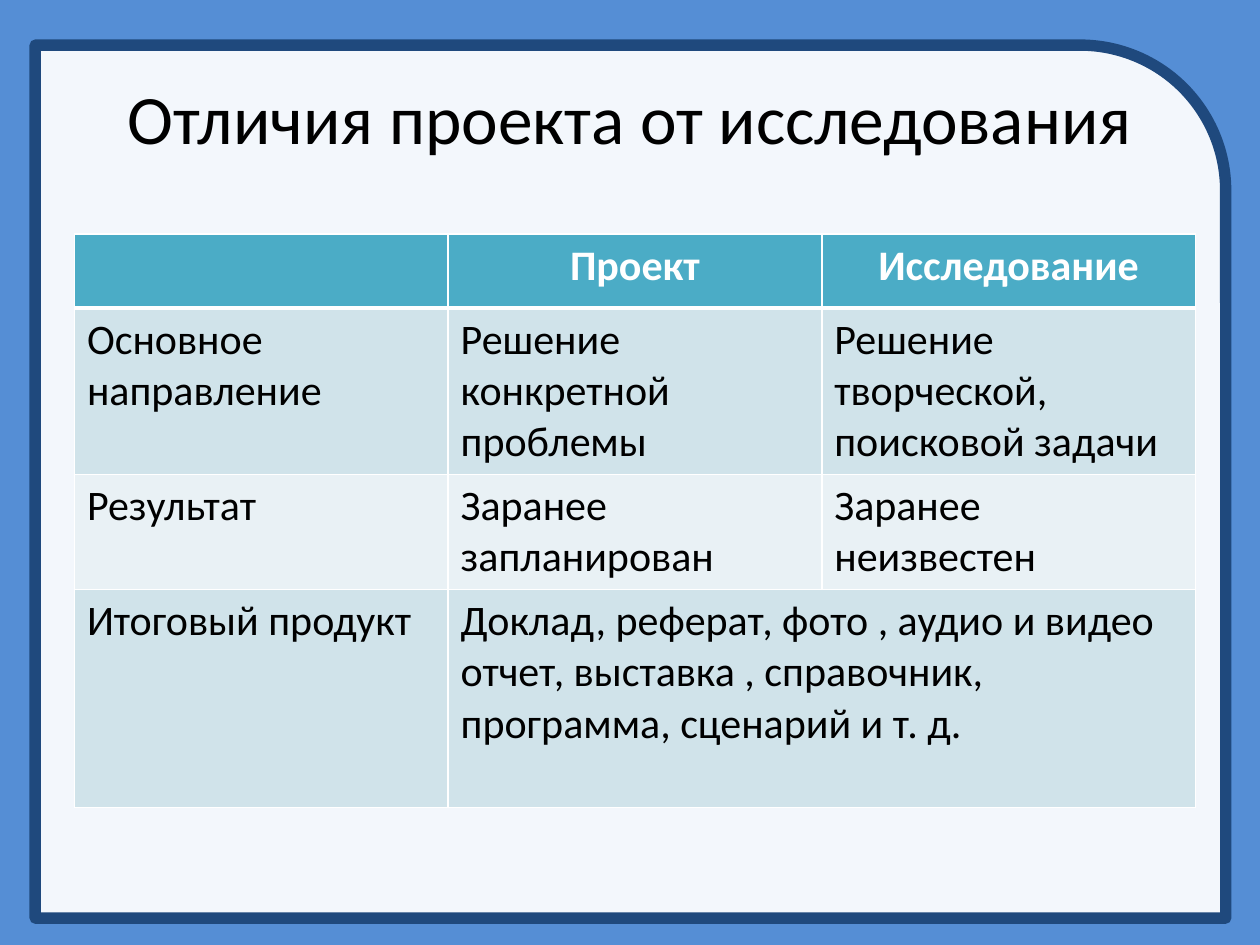
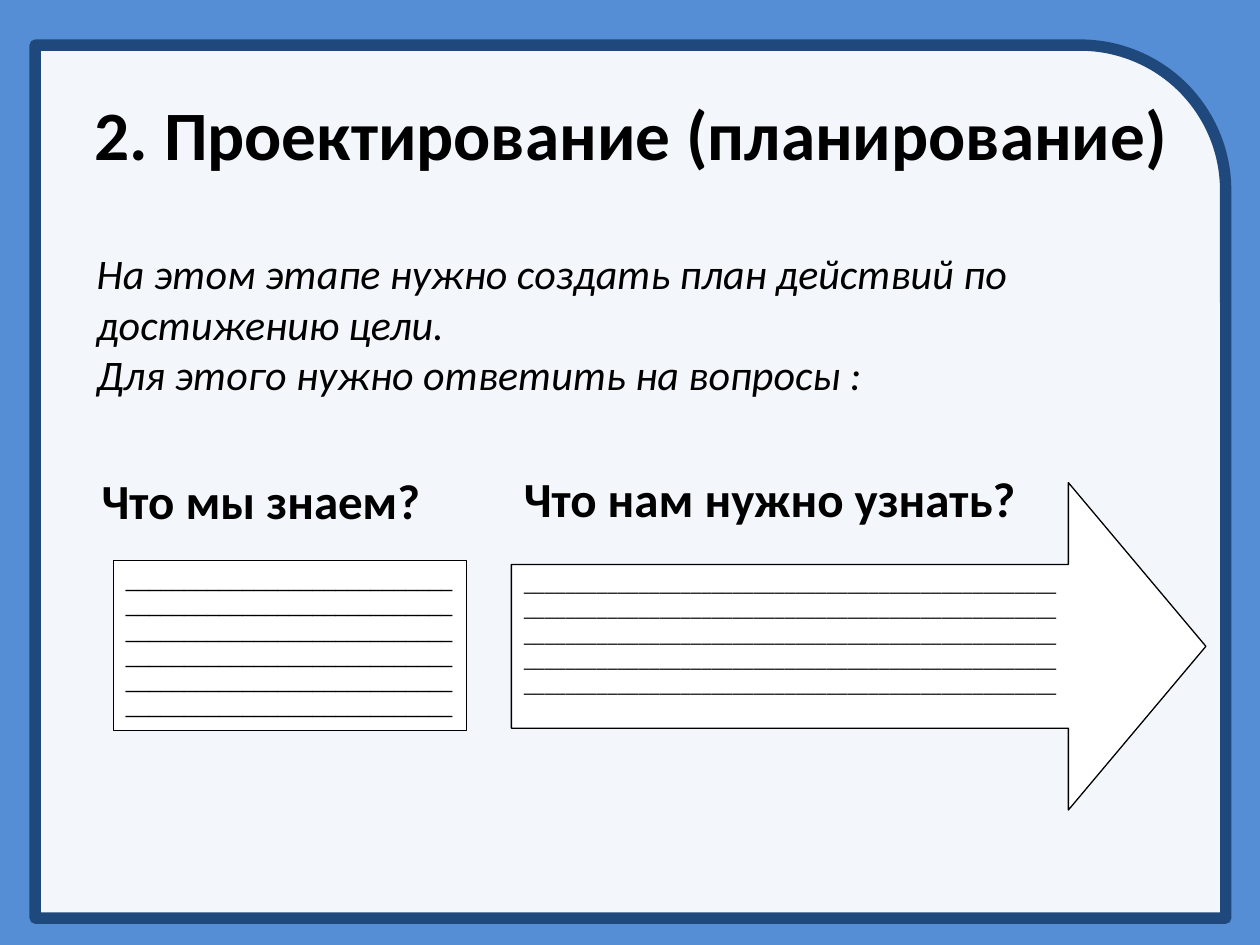
from lxml.etree import SubElement
from pptx import Presentation
from pptx.dml.color import RGBColor
from pptx.enum.shapes import MSO_SHAPE
from pptx.enum.text import MSO_ANCHOR, PP_ALIGN
from pptx.oxml.ns import qn
from pptx.util import Cm, Pt

COLORS = {
    "background": "558ED5",
    "frame": "1F497D",
    "white": "FFFFFF",
    "black": "000000",
    "header": "4BACC6",
    "band_dark": "D0E3EA",
    "band_light": "E9F1F5",
}
FONT = "Calibri"
TITLE_SIZE = 39.6


def color(name):
    return RGBColor.from_string(COLORS[name])


def set_font(p, size, name=FONT, ink="black", bold=False, italic=False):
    f = p.font
    f.name, f.size, f.bold, f.italic = name, Pt(size), bold, italic
    f.color.rgb = color(ink)


def write(tf, lines, size, align=PP_ALIGN.LEFT, **style):
    tf.word_wrap = True
    tf.text = "\n".join(lines)
    for p in tf.paragraphs:
        p.alignment = align
        set_font(p, size, **style)


def add_text(s, box, lines, size, **style):
    tb = s.shapes.add_textbox(*map(Cm, box))
    write(tb.text_frame, lines, size, **style)


def add_shape(s, kind, box, line, width):
    sp = s.shapes.add_shape(kind, *map(Cm, box))
    sp.shadow.inherit = False
    sp.fill.solid()
    sp.fill.fore_color.rgb = color("white")
    sp.line.color.rgb = color(line)
    sp.line.width = Pt(width)
    return sp


def add_master_frame(prs, s):
    master = prs.slide_master
    master.background.fill.solid()
    master.background.fill.fore_color.rgb = color("background")
    sp = add_shape(s, MSO_SHAPE.ROUND_1_RECTANGLE, (0.71, 0.91, 24, 17.6), "frame", 6.5)
    fill = sp.element.spPr.find(qn("a:solidFill"))
    SubElement(fill[0], qn("a:alpha"), val="93000")
    SubElement(sp.element.spPr.find(qn("a:ln")), qn("a:round"))
    master.shapes[0].element.addprevious(sp.element)


def set_title(s, box, text, bold=False, anchor=MSO_ANCHOR.MIDDLE):
    title = s.shapes.title
    title.left, title.top, title.width, title.height = map(Cm, box)
    write(title.text_frame, [text], TITLE_SIZE, PP_ALIGN.CENTER, bold=bold)
    title.text_frame.vertical_anchor = anchor
    return title


def set_borders(cell, **widths):
    tcPr = cell._tc.get_or_add_tcPr()
    for side in "LRTB":
        ln = SubElement(tcPr, qn(f"a:ln{side}"), w=str(Pt(widths.get(side, 1))))
        fill = SubElement(ln, qn("a:solidFill"))
        SubElement(fill, qn("a:srgbClr"), val=COLORS["white"])


def add_comparison(s, box, rows, heights):
    n_cols = len(rows[0])
    table = s.shapes.add_table(len(rows), n_cols, *map(Cm, box)).table
    for col in table.columns:
        col.width = Cm(box[2] / n_cols)
    table.cell(len(rows) - 1, 1).merge(table.cell(len(rows) - 1, n_cols - 1))
    for i, (texts, height) in enumerate(zip(rows, heights)):
        table.rows[i].height = Cm(height)
        header = i == 0
        band = "header" if header else "band_dark" if i % 2 else "band_light"
        for j, text in enumerate(texts):
            cell = table.cell(i, j)
            set_borders(cell, T=3 if i == 1 else 1, B=3 if header else 1)
            cell.fill.solid()
            cell.fill.fore_color.rgb = color(band)
            write(cell.text_frame, [text], 24,
                  PP_ALIGN.CENTER if header else PP_ALIGN.LEFT,
                  ink="white" if header else "black", bold=header)


def add_question(s, box, question, kind, answer_box, blanks, font):
    left, top, width, height = box
    dx, dy, answer_width, answer_height = answer_box
    sp = add_shape(s, kind, (left + dx, top + dy, answer_width, answer_height), "black", 0.75)
    write(sp.text_frame, blanks, 12, name=font)
    sp.text_frame.vertical_anchor = MSO_ANCHOR.TOP
    add_text(s, box, [question], 28, bold=True)
    return sp


def build_differences(s):
    set_title(s, (1.27, 0.76, 22.86, 3.18), "Отличия проекта от исследования")
    rows = [
        ("", "Проект", "Исследование"),
        ("Основное направление", "Решение конкретной проблемы",
         "Решение творческой, поисковой задачи"),
        ("Результат", "Заранее запланирован", "Заранее неизвестен"),
        ("Итоговый продукт",
         "Доклад, реферат, фото , аудио и видео отчет, выставка , "
         "справочник, программа, сценарий и т. д."),
    ]
    add_comparison(s, (1.5, 4.72, 22.6, 11.54), rows, (1.49, 3.35, 2.31, 4.39))


def build_planning(s):
    title = set_title(s, (1.3, 1.83, 22.86, 3.18), "2. Проектирование (планирование)",
                      bold=True, anchor=MSO_ANCHOR.TOP)
    title.text_frame.margin_top = 0
    add_text(s, (1.7, 4.87, 22.6, 3.33),
             ["На этом этапе нужно создать план действий по достижению цели.",
              "Для этого нужно ответить на вопросы :"], 24, italic=True)
    arrow = add_question(s, (10.31, 9.32, 12.17, 1.45), "Что нам нужно узнать?",
                         MSO_SHAPE.RIGHT_ARROW, (0, 0.41, 14, 6.6), ["_" * 51] * 5, FONT)
    arrow.adjustments[0], arrow.adjustments[1] = 0.5, 0.42
    answer = add_question(s, (1.8, 9.37, 7.6, 1.45), "Что мы знаем?",
                          MSO_SHAPE.RECTANGLE, (0.49, 1.93, 7.12, 3.43), ["_" * 28 * 6], "Arial")
    answer.text_frame.margin_right = Cm(0.2)


def main():
    prs = Presentation()
    prs.slide_width, prs.slide_height = Cm(25.4), Cm(19.05)
    layout = prs.slide_layouts.get_by_name("Title Only")
    differences, planning = (prs.slides.add_slide(layout) for _ in range(2))
    add_master_frame(prs, differences)
    build_differences(differences)
    build_planning(planning)
    prs.save("out.pptx")


if __name__ == "__main__":
    main()
